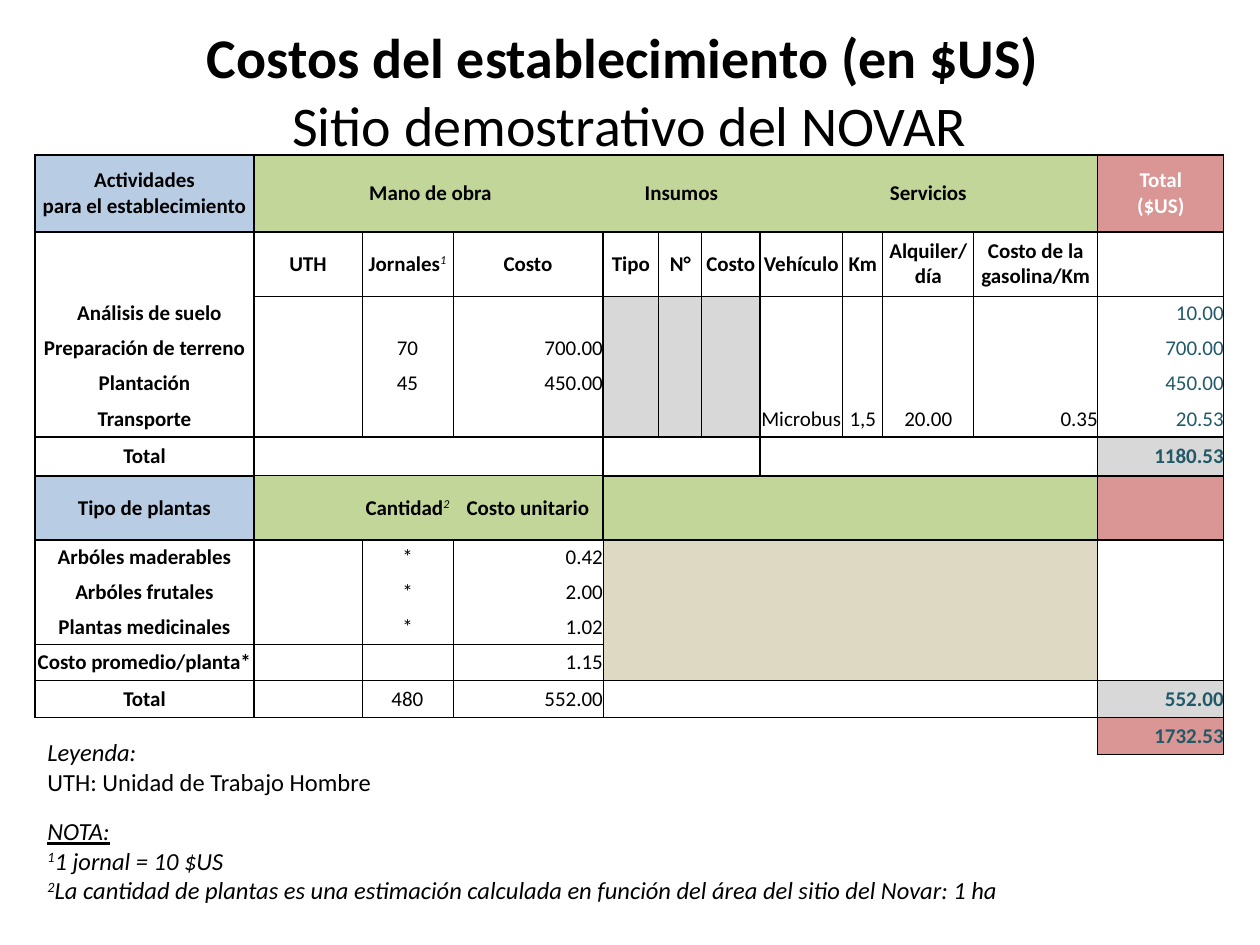
from itertools import product
from lxml.etree import SubElement
from pptx import Presentation
from pptx.dml.color import RGBColor as RGB
from pptx.enum.shapes import MSO_SHAPE as SHAPE
from pptx.enum.text import MSO_ANCHOR as ANCHOR, PP_ALIGN as AL
from pptx.oxml.ns import qn
from pptx.util import Pt

THEME = {
    "font": "Calibri", "title": 32, "note": 14, "cell": 12, "empty": 8,
    "black": "000000", "white": "FFFFFF", "teal": "215968", "blue": "B8CCE4",
    "green": "C2D69A", "red": "D99694", "gray": "D8D8D8", "beige": "DDD9C3",
}
SIZE = (1260, 945)
NO_GRID = "{2D5ABB26-0587-4C30-8999-92F81FD0307C}"

TITLE = [("Costos del establecimiento (en $US) ", {"bold": True}),
         ("Sitio demostrativo del NOVAR", {})]
LEGEND = [("Leyenda:", {"italic": True}), ("UTH: Unidad de Trabajo Hombre", {})]
NOTES = [("NOTA:", {"italic": True, "underline": True}),
         ("^1^1 jornal = 10 $US", {"italic": True}),
         ("^2^La cantidad de plantas es una estimación calculada en función "
          "del área del sitio del Novar: 1 ha", {"italic": True})]

ORIGIN = (35, 155)
COLS = [219, 108, 91, 150, 56, 43, 58, 83, 40, 91, 124, 126]
HEIGHTS = [77, 64, 35, 35, 35, 36, 39, 64, 35, 35, 35, 36, 37, 37]
ROWS = [
    {0: "Actividades\npara el establecimiento", 1: "Mano de obra", 4: "Insumos",
     9: "Servicios", 11: "Total\n($US)"},
    {1: "UTH", 2: "Jornales^1", 3: "Costo", 4: "Tipo", 5: "N°", 6: "Costo",
     7: "Vehículo", 8: "Km", 9: "Alquiler/\ndía", 10: "Costo de la gasolina/Km"},
    {0: "Análisis de suelo", 11: "10.00"},
    {0: "Preparación de terreno", 2: "70", 3: "700.00", 11: "700.00"},
    {0: "Plantación", 2: "45", 3: "450.00", 11: "450.00"},
    {0: "Transporte", 7: "Microbus", 8: "1,5", 9: "20.00", 10: "0.35", 11: "20.53"},
    {0: "Total", 11: "1180.53"},
    {0: "Tipo de plantas", 2: "Cantidad^2", 3: "Costo unitario"},
    {0: "Arbóles maderables", 2: "*", 3: "0.42"},
    {0: "Arbóles frutales", 2: "*", 3: "2.00"},
    {0: "Plantas medicinales", 2: "*", 3: "1.02"},
    {0: "Costo promedio/planta*", 3: "1.15"},
    {0: "Total", 2: "480", 3: "552.00", 11: "552.00"},
    {11: "1732.53"},
]
HEADERS, TOTALS, MONEY = (0, 1, 7), (6, 12, 13), (3, 10, 11)
MERGES = [(0, 1, 3), (0, 4, 6)]
INDENTS = {(0, 1): 4, (2, 0): 10}

FILLS = [
    ("blue", (0, 7), (0,)), ("green", (0, 7), range(1, 11)),
    ("red", (0, 7, 13), (11,)), ("gray", range(2, 6), range(4, 7)),
    ("gray", (6, 12), (11,)), ("beige", range(8, 12), range(4, 11)),
    ("white", (6,), range(1, 7)), ("white", (12,), range(4, 11)),
]
H_RULES = [((0, 1, 6, 8, 12, 13), 0, 12, 1), ((2,), 1, 12, 0.5), ((7,), 0, 12, 1),
           ((7,), 1, 4, 0.5), ((11,), 0, 4, 0.5), ((14,), 11, 12, 1)]
V_RULES = [((0, 1), 0, 13, 1), ((11, 12), 0, 14, 1), ((4,), 1, 8, 1),
           ((4,), 8, 13, 0.5), ((7,), 1, 7, 1), ((2, 3, 5, 6, 8, 9, 10), 1, 6, 0.5),
           ((2, 3), 8, 13, 0.5)]


def px(n):
    return round(n * 914400 / 126)


def rgb(name):
    return RGB.from_string(THEME[name])


def write(tf, lines, size, align, color="black"):
    for i, (text, fmt) in enumerate(lines):
        p = tf.paragraphs[0] if i == 0 else tf.add_paragraph()
        p.alignment = align
        for k, part in enumerate(text.split("^")):
            if not part:
                continue
            r = p.add_run()
            r.text = part
            look = {"name": THEME["font"], "size": Pt(THEME[size]), **fmt}
            if k % 2:
                look.update(bold=False, italic=True)
                r.font._element.set("baseline", "30000")
            for key, value in look.items():
                setattr(r.font, key, value)
            r.font.color.rgb = rgb(color)


def edges(rules):
    return {(line, k): width for lines, start, end, width in rules
            for line in lines for k in range(start, end)}


def set_borders(cell, widths):
    tcPr = cell._tc.get_or_add_tcPr()
    for tag, width in widths.items():
        ln = SubElement(tcPr, qn(f"a:{tag}"), w=str(Pt(width)))
        if width:
            fill = SubElement(ln, qn("a:solidFill"))
            SubElement(fill, qn("a:srgbClr"), val=THEME["black"])
        else:
            SubElement(ln, qn("a:noFill"))


def add_table(slide):
    frame = slide.shapes.add_table(len(ROWS), len(COLS), *map(
        px, (*ORIGIN, sum(COLS), sum(HEIGHTS))))
    table = frame.table
    table.first_row = table.horz_banding = False
    table._tbl.tblPr.find(qn("a:tableStyleId")).text = NO_GRID
    for col, w in zip(table.columns, COLS):
        col.width = px(w)
    for row, h in zip(table.rows, HEIGHTS):
        row.height = px(h)
    for r, first, last in MERGES:
        table.cell(r, first).merge(table.cell(r, last))
    fills = {rc: name for name, rows, cols in FILLS for rc in product(rows, cols)}
    across, down = edges(H_RULES), edges(V_RULES)
    for r, c in product(range(len(ROWS)), range(len(COLS))):
        cell = table.cell(r, c)
        cell.margin_right = cell.margin_top = cell.margin_bottom = 0
        cell.margin_left = px(INDENTS.get((r, c), 0))
        cell.vertical_anchor = ANCHOR.MIDDLE
        set_borders(cell, {
            "lnL": down.get((c, r), 0), "lnR": down.get((c + 1, r), 0),
            "lnT": across.get((r, c), 0), "lnB": across.get((r + 1, c), 0)})
        if (r, c) in fills:
            cell.fill.solid()
            cell.fill.fore_color.rgb = rgb(fills[r, c])
        else:
            cell.fill.background()
        text = ROWS[r].get(c)
        if not text:
            end = cell.text_frame.paragraphs[0]._p.get_or_add_endParaRPr()
            end.set("sz", str(THEME["empty"] * 100))
            continue
        bold = c == 0 or r in HEADERS or (c == 11 and r in TOTALS)
        align = AL.RIGHT if c in MONEY and r not in HEADERS else AL.CENTER
        color = "black" if c < 11 else "white" if r == 0 else "teal"
        write(cell.text_frame, [(t, {"bold": bold}) for t in text.split("\n")],
              "cell", align, color)


def add_text(slide, box, lines, size, align=AL.LEFT, wrap=True):
    sp = slide.shapes.add_textbox(*map(px, box))
    sp.text_frame.word_wrap = wrap
    write(sp.text_frame, lines, size, align)
    return sp


def add_notes(slide):
    sp = slide.shapes.add_shape(SHAPE.RECTANGLE, *map(px, (35, 810, 1181, 118)))
    sp.shadow.inherit = False
    sp.fill.solid()
    sp.fill.fore_color.rgb = rgb("white")
    sp.line.fill.background()
    sp.text_frame.word_wrap = True
    sp.text_frame.vertical_anchor = ANCHOR.TOP
    write(sp.text_frame, NOTES, "note", AL.LEFT)


def main():
    prs = Presentation()
    prs.slide_width, prs.slide_height = map(px, SIZE)
    slide = prs.slides.add_slide(prs.slide_layouts[6])
    add_table(slide)
    add_text(slide, (35, 731, 353, 72), LEGEND, "note", wrap=False)
    add_notes(slide)
    title = add_text(slide, (94, 16, 1071, 100), TITLE, "title", AL.CENTER)
    title.text_frame.margin_top = px(7)
    prs.save("out.pptx")


if __name__ == "__main__":
    main()
